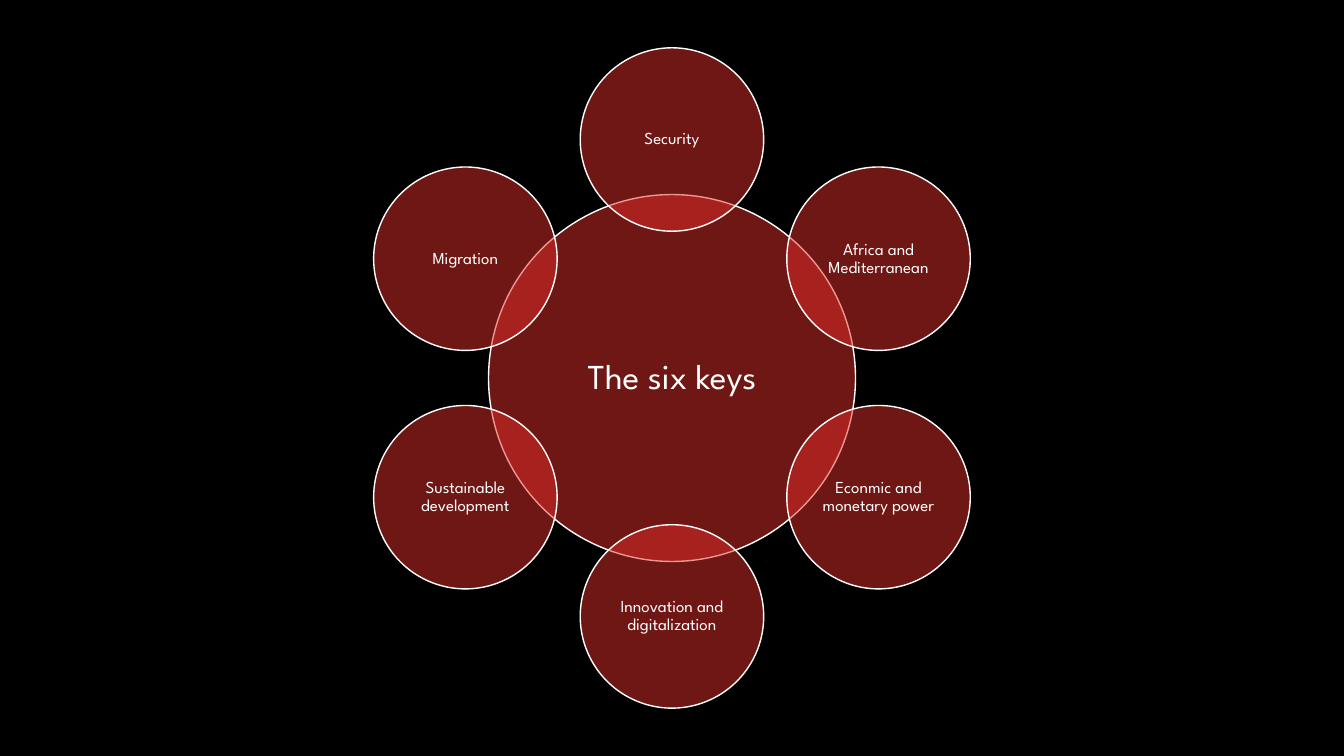
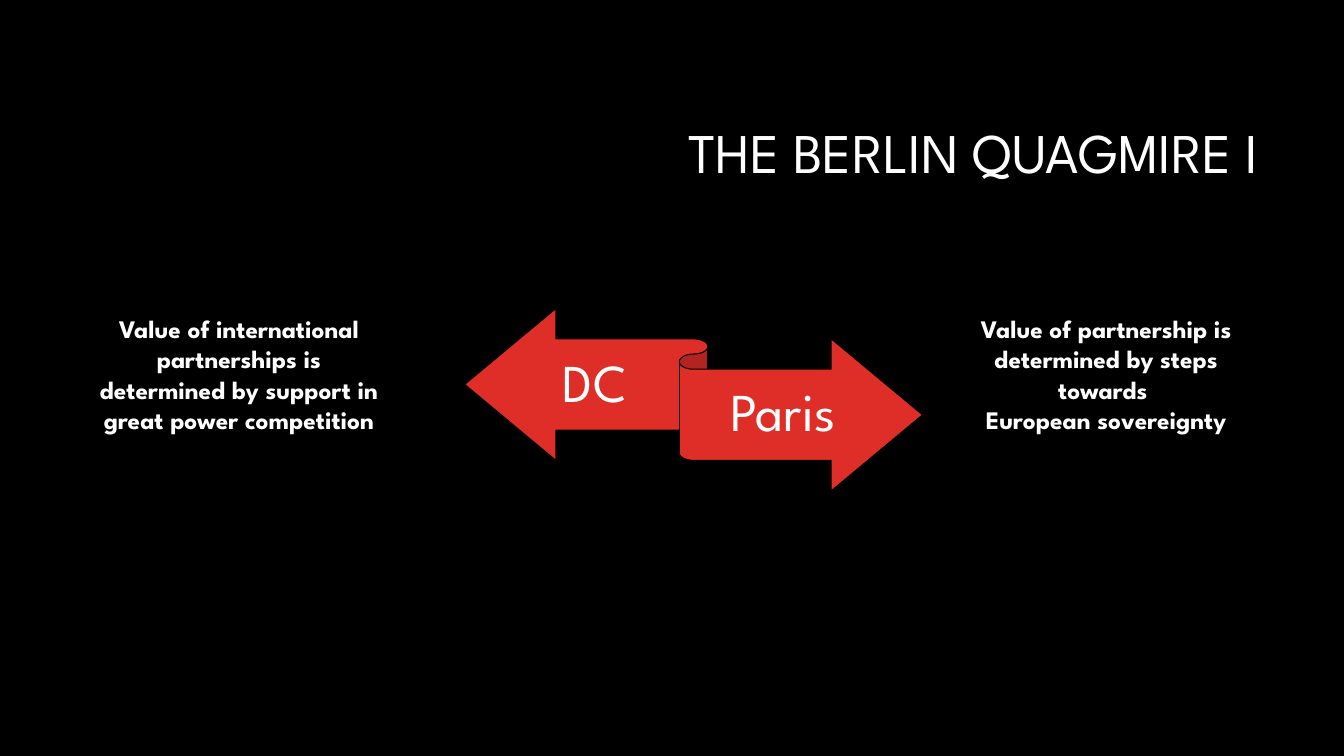
from dataclasses import dataclass
from math import cos, radians, sin

from lxml.etree import SubElement
from pptx import Presentation
from pptx.dml.color import RGBColor as RGB
from pptx.enum.shapes import MSO_SHAPE as SHAPE
from pptx.enum.text import MSO_ANCHOR as ANCHOR, PP_ALIGN as ALIGN
from pptx.oxml.ns import qn
from pptx.util import Inches, Pt


@dataclass(frozen=True)
class Theme:
    back: RGB = RGB(0x00, 0x00, 0x00)
    ink: RGB = RGB(0xFF, 0xFF, 0xFF)
    accent: RGB = RGB(0xDF, 0x2E, 0x28)
    font: str = "League Spartan"
    title: int = 40
    arrow: int = 38
    hub: int = 25
    body: int = 18
    key: int = 12


def put_text(sp, text, size, align=ALIGN.CENTER, anchor=ANCHOR.MIDDLE,
             spacing=0.9, bold=False, insets=(0.1, 0.05, 0.1, 0.05)):
    tf = sp.text_frame
    sides = ("margin_left", "margin_top", "margin_right", "margin_bottom")
    frame = {"word_wrap": True, "vertical_anchor": anchor}
    frame.update(zip(sides, map(Inches, insets)))
    p = tf.paragraphs[0]
    p.text = text
    para = {"alignment": align, "line_spacing": spacing}
    for target, values in ((tf, frame), (p, para)):
        for name, value in values.items():
            setattr(target, name, value)
    look = {"name": th.font, "size": Pt(size), "bold": bold}
    for r in p.runs:
        for name, value in look.items():
            setattr(r.font, name, value)
        r.font.color.rgb = th.ink


def put_shape(s, kind, box, line, width):
    sp = s.shapes.add_shape(kind, *map(int, box))
    sp.shadow.inherit = False
    sp.fill.solid()
    sp.fill.fore_color.rgb = th.accent
    sp.line.color.rgb = line
    sp.line.width = Pt(width)
    return sp


th = Theme()
prs = Presentation()
prs.slide_width, prs.slide_height = Inches(13.33), Inches(7.5)
W, H = prs.slide_width, prs.slide_height
bg = prs.slide_master.background.fill
bg.solid()
bg.fore_color.rgb = th.back
blank = prs.slide_layouts[6]

s = prs.slides.add_slide(blank)
hub_d = 0.4853 * H
key_d = hub_d / 2
orbit = 0.65 * hub_d
keys = ["Security", "Africa and Mediterranean", "Econmic and monetary power",
        "Innovation and digitalization", "Sustainable development", "Migration"]
circles = [("The six keys", W / 2, H / 2, hub_d, th.hub, 0.03)]
for i, key in enumerate(keys):
    a = radians(360 / len(keys) * i)
    circles.append((key, W / 2 + orbit * sin(a), H / 2 - orbit * cos(a),
                    key_d, th.key, 0.02))
for text, x, y, d, size, inset in circles:
    sp = put_shape(s, SHAPE.OVAL, (x - d / 2, y - d / 2, d, d), th.ink, 1)
    rgb = sp.fill._xPr.find(qn("a:solidFill"))[0]
    SubElement(rgb, qn("a:alpha")).set("val", "50000")
    put_text(sp, text, size, insets=(inset,) * 4)

s = prs.slides.add_slide(blank)
col, row = W / 100, H / 100
put_shape(s, SHAPE.LEFT_RIGHT_RIBBON,
          (34.58 * col, 40.8 * row, 34.06 * col, 24.13 * row), th.back, 0)
title = {"size": th.title, "align": ALIGN.RIGHT}
arrow = {"size": th.arrow, "insets": (0, 0.15, 0, 0.16)}
body = {"size": th.body, "anchor": ANCHOR.TOP, "spacing": 1, "bold": True}
boxes = [
    ("THE BERLIN QUAGMIRE I", 10.43, 11.2, 83.95, 18.8, title),
    ("DC", 38.63, 45.07, 11.25, 11.87, arrow),
    ("Paris", 51.61, 48.93, 13.28, 11.87, arrow),
    ("Value of international partnerships is determined by support in "
     "great power competition", 6.6, 40.8, 22.36, 21.6, body),
    ("Value of partnership is determined by steps towards \vEuropean sovereignty",
     71.12, 40.8, 22.36, 17.47, body),
]
for text, x, y, w, h, style in boxes:
    sp = s.shapes.add_textbox(int(x * col), int(y * row), int(w * col), int(h * row))
    put_text(sp, text, **style)

prs.save("out.pptx")
